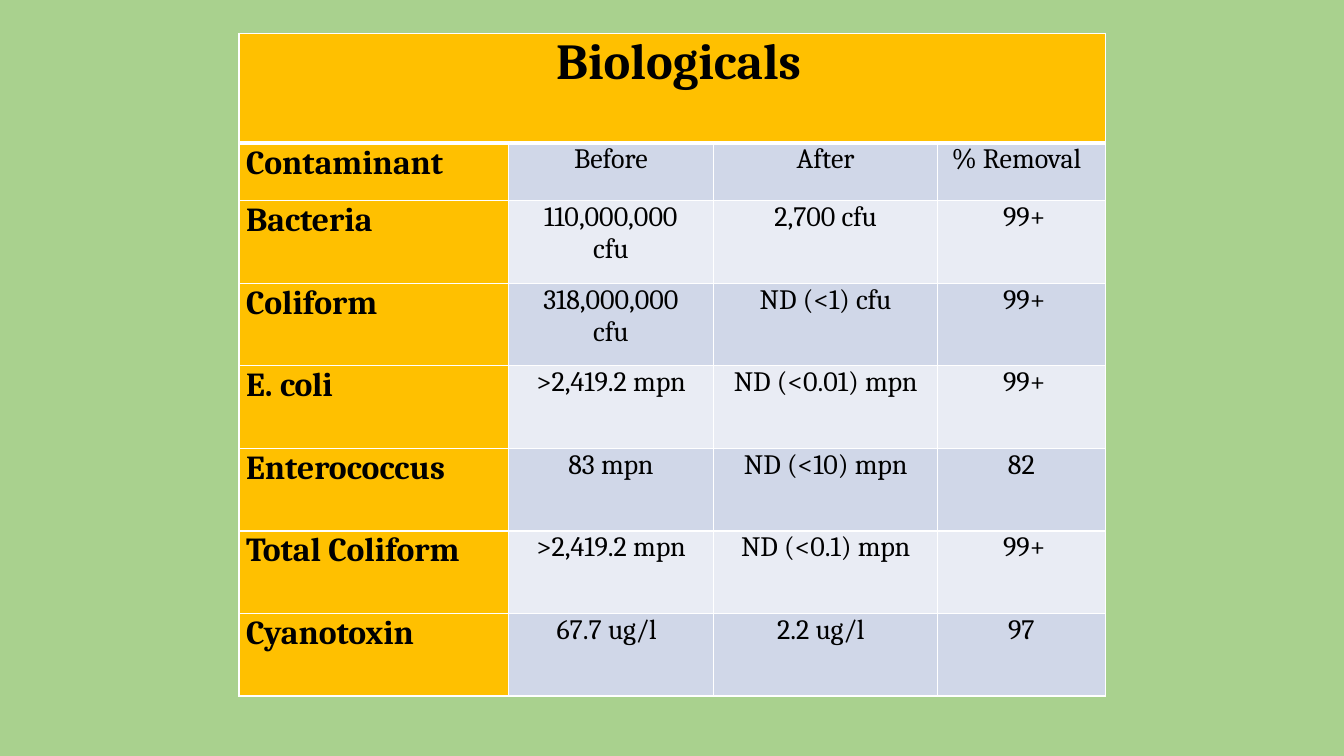
from dataclasses import dataclass

from lxml import etree
from pptx import Presentation
from pptx import util as u
from pptx.dml.color import RGBColor
from pptx.enum import text
from pptx.oxml import ns


@dataclass
class Theme:
    font: str = "Cambria"
    back: str = "A9D18E"
    gold: str = "FFC000"
    dark: str = "D0D7E8"
    light: str = "E9ECF4"
    ink: str = "000000"
    rule: str = "FFFFFF"
    title: int = 36
    label: int = 24
    body: int = 20


TITLE = "Biologicals"
ROWS = [
    ("Contaminant", "Before", "After", "% Removal"),
    ("Bacteria", "110,000,000\ncfu", "2,700 cfu", "99+"),
    ("Coliform", "318,000,000\ncfu", "ND (<1) cfu", "99+"),
    ("E. coli", ">2,419.2 mpn", "ND (<0.01) mpn", "99+"),
    ("Enterococcus", "83 mpn", "ND (<10) mpn", "82"),
    ("Total Coliform", ">2,419.2 mpn", "ND (<0.1) mpn", "99+"),
    ("Cyanotoxin", "67.7 ug/l", "2.2 ug/l", "97"),
]
WIDTHS = [6.78, 5.18, 5.64, 4.22]
HEIGHTS = [2.77, 1.45] + [2.08] * 6
# Values set from the left edge of their cell, in cm; the rest are centred
INDENTS = {"% Removal": 0.36, "99+": 1.65, "67.7 ug/l": 1.22, "2.2 ug/l": 1.6}
UNITS = ("cfu", "mpn", "ug/l", "coli")


class Deck:
    def __init__(self, theme):
        self.theme = theme
        self.prs = Presentation()
        self.prs.slide_width = u.Inches(13.33)
        self.prs.slide_height = u.Inches(7.5)
        self.slide = self.prs.slides.add_slide(self.prs.slide_layouts[6])
        fill = self.slide.background.fill
        fill.solid()
        fill.fore_color.rgb = RGBColor.from_string(theme.back)

    def grid(self, left, top, widths, heights):
        frame = self.slide.shapes.add_table(
            len(heights), len(widths), u.Cm(left), u.Cm(top),
            u.Cm(sum(widths)), u.Cm(sum(heights)))
        table = frame.table
        table.first_row = table.horz_banding = False
        for col, width in zip(table.columns, widths):
            col.width = u.Cm(width)
        for row, height in zip(table.rows, heights):
            row.height = u.Cm(height)
        return table

    def edges(self, cell, sides):
        """Draw the cell's borders; sides maps L, R, T, B to points."""
        props = cell._tc.get_or_add_tcPr()
        for side, width in sides.items():
            line = etree.SubElement(props, ns.qn("a:ln" + side), w=str(u.Pt(width)))
            solid = etree.SubElement(line, ns.qn("a:solidFill"))
            etree.SubElement(solid, ns.qn("a:srgbClr"), val=self.theme.rule)

    def run(self, para, words, size, bold):
        run = para.add_run()
        run.text = words
        look = {"name": self.theme.font, "size": u.Pt(size), "bold": bold}
        for name, value in look.items():
            setattr(run.font, name, value)
        run.font.color.rgb = RGBColor.from_string(self.theme.ink)
        if words in UNITS:
            run.font._element.set("spc", "-20")

    def cell(self, cell, words, fill, size, bold=False, indent=0, center=True, thick=""):
        """Fill one cell; thick names the sides with a heavy border."""
        self.edges(cell, {side: 3 if side in thick else 1 for side in "LRTB"})
        for side in ("left", "right", "top", "bottom"):
            setattr(cell, "margin_" + side, 0)
        cell.fill.solid()
        cell.fill.fore_color.rgb = RGBColor.from_string(fill)
        frame = cell.text_frame
        for num, line in enumerate(words.split("\n")):
            para = frame.add_paragraph() if num else frame.paragraphs[0]
            para.alignment = text.PP_ALIGN.CENTER if center else text.PP_ALIGN.LEFT
            if not num:
                para.line_spacing = u.Pt(round(size * 1.17, 1))
            para._p.get_or_add_pPr().set("marL", str(u.Cm(indent)))
            head, gap, tail = line.rpartition(" ")
            if gap:
                self.run(para, head + gap, size, bold)
            self.run(para, tail, size, bold)


def main():
    theme = Theme()
    deck = Deck(theme)
    table = deck.grid(6.02, 0.84, WIDTHS, HEIGHTS)
    top = table.cell(0, 0)
    top.merge(table.cell(0, len(WIDTHS) - 1))
    deck.cell(top, TITLE, theme.gold, theme.title, True, 0.33, thick="B")
    for r, row in enumerate(ROWS, 1):
        thick = "T" if r == 1 else ""
        band = theme.dark if r % 2 else theme.light
        for c, words in enumerate(row):
            cell = table.cell(r, c)
            if c == 0:
                deck.cell(cell, words, theme.gold, theme.label, True, 0.18, False, thick)
            else:
                indent = INDENTS.get(words, 0)
                deck.cell(cell, words, band, theme.body, False, indent, not indent, thick)
    deck.prs.save("out.pptx")


if __name__ == "__main__":
    main()
